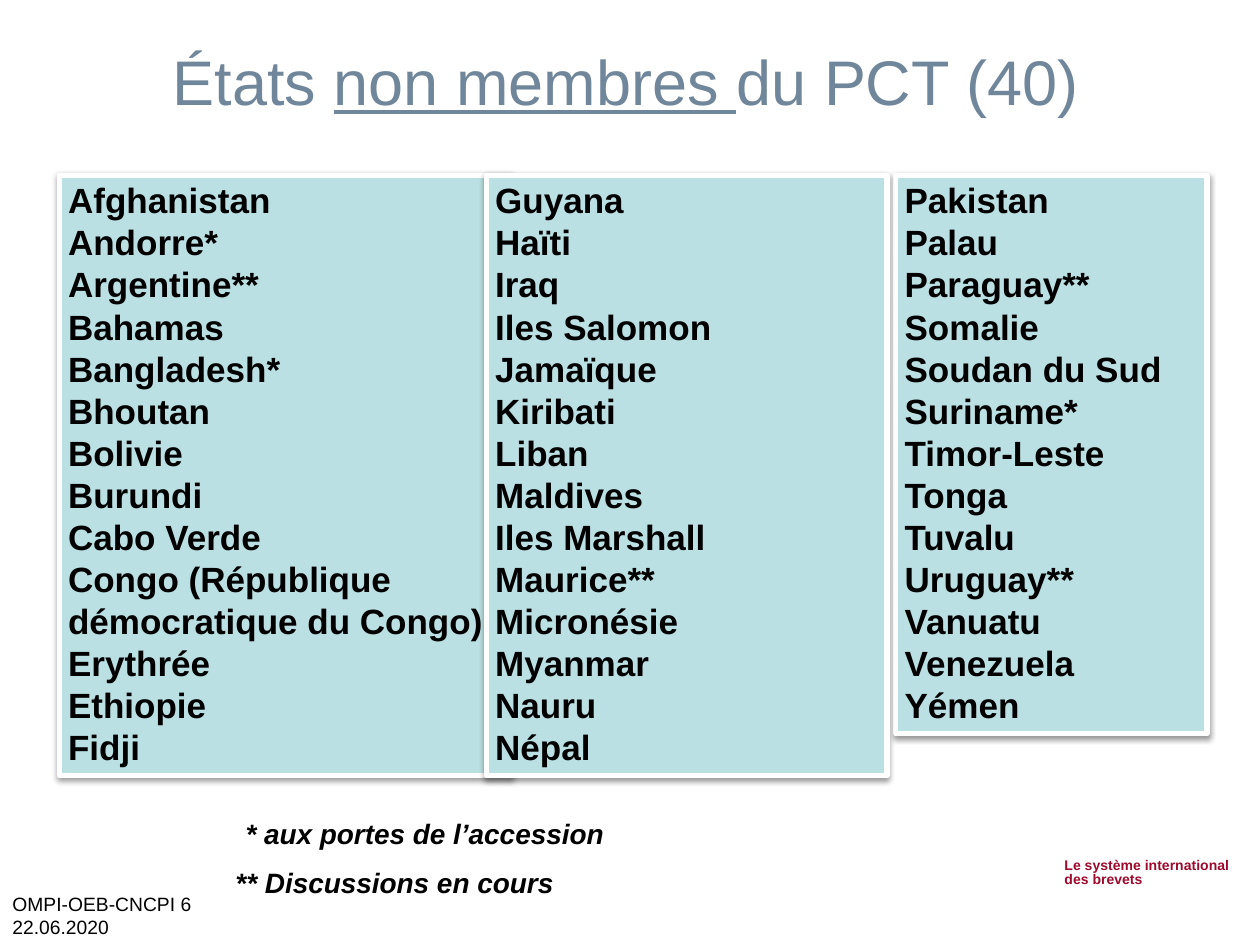
from lxml import etree
from pptx import Presentation, util as u
from pptx.dml.color import RGBColor
from pptx.enum import shapes, text
from pptx.oxml.ns import qn

BLACK = RGBColor(0x00, 0x00, 0x00)
WHITE = RGBColor(0xFF, 0xFF, 0xFF)
SLATE = RGBColor(0x70, 0x86, 0x9B)
CRIMSON = RGBColor(0x9D, 0x0A, 0x2B)
PALE_BLUE = RGBColor(0xBB, 0xE0, 0xE3)

WIDTH, HEIGHT = 10, 7.5
COLUMNS_TOP = 1.39
ROW = 1 / 3  # height of one line of a country list
PAD_X, PAD_Y = 0.07, 0.03

# Left edge, width, number of text rows, countries; listed from back to front
COLUMNS = [
    (0.47, 3.59, 14, [
        "Afghanistan", "Andorre*", "Argentine**", "Bahamas", "Bangladesh*",
        "Bhoutan", "Bolivie", "Burundi", "Cabo Verde",
        "Congo (République démocratique du Congo)", "Erythrée", "Ethiopie",
        "Fidji"]),
    (7.11, 2.47, 13, [
        "Pakistan", "Palau", "Paraguay**", "Somalie", "Soudan du Sud",
        "Suriname*", "Timor-Leste", "Tonga", "Tuvalu", "Uruguay**", "Vanuatu",
        "Venezuela", "Yémen"]),
    (3.86, 3.18, 14, [
        "Guyana", "Haïti", "Iraq", "Iles Salomon", "Jamaïque", "Kiribati",
        "Liban", "Maldives", "Iles Marshall", "Maurice**", "Micronésie",
        "Myanmar", "Nauru", "Népal"]),
]


def add_run(p, words, size, color, bold=False, italic=False, underline=False):
    r = p.add_run()
    r.text = words
    f = r.font
    f.name, f.size, f.color.rgb = "Arial", u.Pt(size), color
    f.bold, f.italic, f.underline = bold, italic, underline


def add_lines(tf, lines, spacing=None, **style):
    """Write each line as a paragraph of its own."""
    for i, line in enumerate(lines):
        p = tf.add_paragraph() if i else tf.paragraphs[0]
        p.alignment = text.PP_ALIGN.LEFT
        if spacing:
            p.line_spacing = spacing
        add_run(p, line, **style)


def add_box(s, box, anchor=text.MSO_ANCHOR.TOP, wrap=True):
    tf = s.shapes.add_textbox(*map(u.Inches, box)).text_frame
    tf.word_wrap = wrap
    tf.vertical_anchor = anchor
    return tf


def add_soft_shadow(sp):
    sp.shadow.inherit = False
    effects = sp._element.spPr.find(qn("a:effectLst"))
    shadow = etree.SubElement(
        effects, qn("a:outerShdw"), blurRad=str(u.Pt(3.1)),
        dist=str(u.Pt(1.6)), dir="5400000", rotWithShape="0")
    color = etree.SubElement(shadow, qn("a:srgbClr"), val=str(BLACK))
    etree.SubElement(color, qn("a:alpha"), val="38000")


def add_title(s, box):
    p = add_box(s, box, text.MSO_ANCHOR.MIDDLE).paragraphs[0]
    p.alignment = text.PP_ALIGN.CENTER
    add_run(p, "États ", 36, SLATE)
    add_run(p, "non membres ", 36, SLATE, underline=True)
    add_run(p, "du PCT (40)", 36, SLATE)


def add_country_column(s, box, countries):
    sp = s.shapes.add_shape(shapes.MSO_SHAPE.RECTANGLE, *map(u.Inches, box))
    sp.fill.solid()
    sp.fill.fore_color.rgb = PALE_BLUE
    sp.line.color.rgb = WHITE
    sp.line.width = u.Pt(3)
    add_soft_shadow(sp)
    tf = sp.text_frame
    tf.word_wrap = True
    tf.vertical_anchor = text.MSO_ANCHOR.TOP
    tf.margin_left = tf.margin_right = u.Inches(PAD_X)
    tf.margin_top = tf.margin_bottom = u.Inches(PAD_Y)
    add_lines(tf, countries, size=20, color=BLACK, bold=True)


def add_legend(s, box, words):
    add_lines(add_box(s, box), [words], size=16, color=BLACK, bold=True,
              italic=True)


def add_footer(s, box):
    add_lines(add_box(s, box, text.MSO_ANCHOR.BOTTOM),
              ["OMPI-OEB-CNCPI 6", "22.06.2020"], size=11, color=BLACK)


def add_tagline(s, box):
    add_lines(add_box(s, box, wrap=False),
              ["Le système international", "des brevets"], spacing=0.85,
              size=8, color=CRIMSON, bold=True)


def main():
    prs = Presentation()
    prs.slide_width, prs.slide_height = u.Inches(WIDTH), u.Inches(HEIGHT)
    s = prs.slides.add_slide(prs.slide_layouts[6])
    add_tagline(s, (8.35, 6.77, 1.54, 0.33))
    add_footer(s, (0, 0.92 * HEIGHT, 0.28 * WIDTH, 0.08 * HEIGHT))
    add_title(s, (0.29, 0.29, 9.35, 0.69))
    for left, width, rows, countries in COLUMNS:
        height = rows * ROW + 0.1
        add_country_column(s, (left, COLUMNS_TOP, width, height), countries)
    add_legend(s, (1.85, 6.43, 4.49, 0.37), "* aux portes de l’accession")
    add_legend(s, (1.77, 6.82, 4.41, 0.37), "** Discussions en cours")
    prs.save("out.pptx")


if __name__ == "__main__":
    main()
